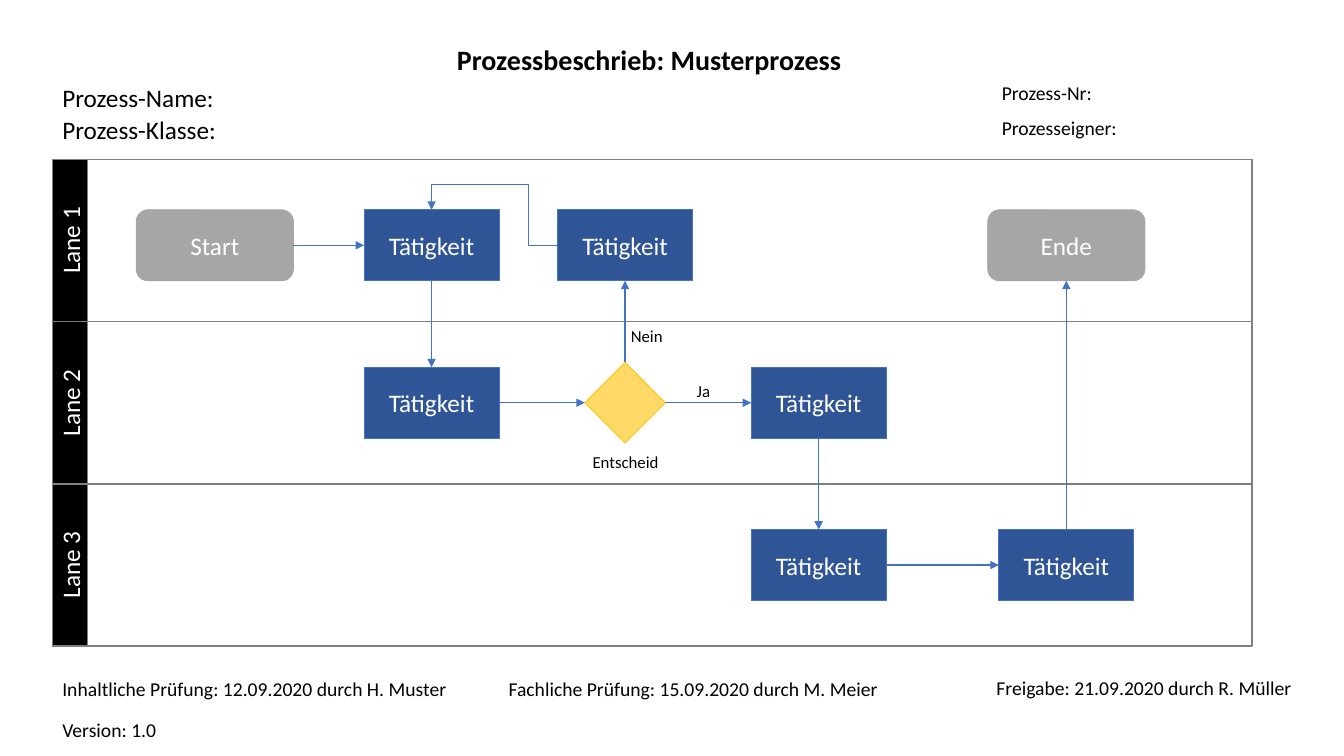
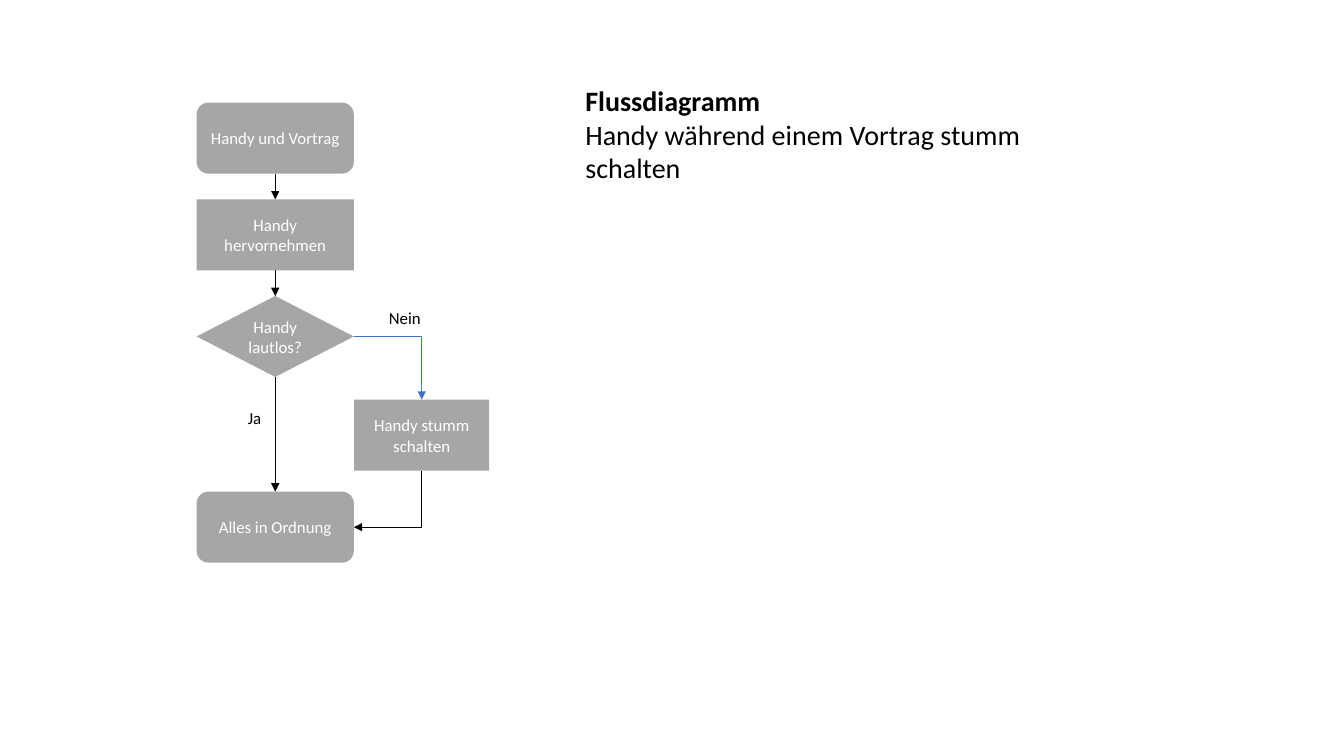
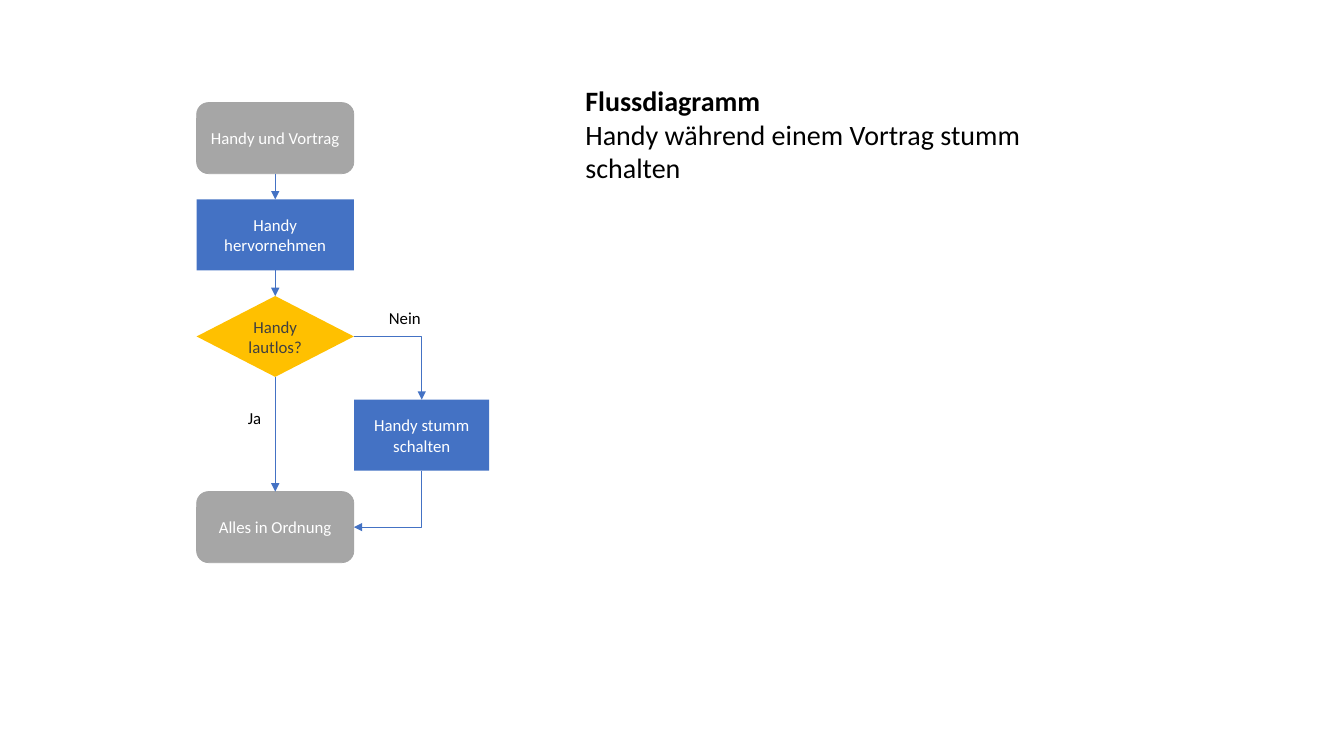
"""Builds a swimlane process slide and two flow chart slides."""
import pptx
import pptx.dml.color
import pptx.enum.shapes
import pptx.enum.text
import pptx.oxml
import pptx.oxml.ns
import pptx.util

SHAPE = pptx.enum.shapes.MSO_SHAPE
LINK = pptx.enum.shapes.MSO_CONNECTOR
ALIGN = pptx.enum.text.PP_ALIGN
ANCHOR = pptx.enum.text.MSO_ANCHOR
TOP, LEFT, BOTTOM, RIGHT = range(4)
COLORS = {
    "black": "000000", "white": "FFFFFF", "frame": "808080", "dark": "404040",
    "grey": "A6A6A6", "grey_line": "A5A5A5", "navy": "2F5597", "blue": "4472C4",
    "yellow": "FFD966", "amber": "FFC000",
}


class Deck:
    """Holds the style and the current slide; lengths are percent of the slide."""

    font = "Calibri"

    def __init__(self):
        self.prs = pptx.Presentation()
        self.prs.slide_width = pptx.util.Inches(13.33)
        self.prs.slide_height = pptx.util.Inches(7.5)

    def slide(self, origin, pitch, size, link_width):
        self.s = self.prs.slides.add_slide(self.prs.slide_layouts[5])
        self.origin, self.pitch = origin, pitch
        self.size, self.link_width = size, link_width

    def box(self, x, y, w, h):
        width, height = self.prs.slide_width, self.prs.slide_height
        return [round(v * full / 100) for v, full in zip((x, y, w, h), (width, height) * 2)]

    def color(self, name):
        return pptx.dml.color.RGBColor.from_string(COLORS[name])

    def add_lines(self, tf, lines, size, color="black", align=ALIGN.LEFT, bold_first=False):
        tf.word_wrap = True
        for i, line in enumerate(lines):
            p = tf.add_paragraph() if i else tf.paragraphs[0]
            p.alignment = align
            r = p.add_run()
            r.text = line
            r.font.name, r.font.size = self.font, pptx.util.Pt(size)
            r.font.bold = bold_first and i == 0
            r.font.color.rgb = self.color(color)

    def title(self, lines, box, align=ALIGN.LEFT):
        sp = self.s.shapes.title
        sp.left, sp.top, sp.width, sp.height = self.box(*box)
        tf = sp.text_frame
        tf.auto_size = pptx.enum.text.MSO_AUTO_SIZE.NONE
        tf.vertical_anchor = ANCHOR.TOP
        self.add_lines(tf, lines, 20, align=align, bold_first=True)

    def text(self, line, box, size=14, align=ALIGN.LEFT):
        sp = self.s.shapes.add_textbox(*self.box(*box))
        self.add_lines(sp.text_frame, [line], size, align=align)

    def shape(self, kind, box, fill=None, line=None, width=0.5, text="", color="white"):
        sp = self.s.shapes.add_shape(kind, *self.box(*box))
        sp.shadow.inherit = False
        if fill:
            sp.fill.solid()
            sp.fill.fore_color.rgb = self.color(fill)
        else:
            sp.fill.background()
        if line:
            sp.line.color.rgb = self.color(line)
            sp.line.width = pptx.util.Pt(width)
        else:
            sp.line.fill.background()
        if text:
            sp.text_frame.vertical_anchor = ANCHOR.MIDDLE
            self.add_lines(sp.text_frame, [text], self.size, color, ALIGN.CENTER)
        return sp

    def node(self, kind, col, row, w, h, *style, **more):
        x = self.origin[0] + col * self.pitch[0] - w / 2
        y = self.origin[1] + row * self.pitch[1] - h / 2
        return self.shape(kind, (x, y, w, h), *style, **more)

    def link(self, a, side_a, b, side_b, color="blue", kind=LINK.STRAIGHT):
        c = self.s.shapes.add_connector(kind, 0, 0, 0, 0)
        c.begin_connect(a, side_a)
        c.end_connect(b, side_b)
        c.line.color.rgb = self.color(color)
        c.line.width = pptx.util.Pt(self.link_width)
        ln = c.line._get_or_add_ln()
        ns = pptx.oxml.ns.nsdecls("a")
        ln.append(pptx.oxml.parse_xml(f'<a:tailEnd {ns} type="triangle"/>'))
        c._element.spPr.append(pptx.oxml.parse_xml(f"<a:effectLst {ns}/>"))
        return c

    def elbow(self, a, side_a, b, side_b, preset, turn=0, adjust=(), color="blue"):
        c = self.link(a, side_a, b, side_b, color, LINK.ELBOW)
        w, h = abs(c.end_x - c.begin_x), abs(c.end_y - c.begin_y)
        mid_x, mid_y = (c.begin_x + c.end_x) // 2, (c.begin_y + c.end_y) // 2
        if turn == 90:
            w, h = h, w
        spPr = c._element.spPr
        for flip in ("flipH", "flipV"):
            spPr.xfrm.attrib.pop(flip, None)
        spPr.xfrm.set("rot", str(turn * 60000))
        c.left, c.top, c.width, c.height = mid_x - w // 2, mid_y - h // 2, w, h
        geom = spPr.find(pptx.oxml.ns.qn("a:prstGeom"))
        geom.set("prst", preset)
        guides = "".join(f'<a:gd name="adj{i}" fmla="val {v}"/>' for i, v in enumerate(adjust, 1))
        for old in list(geom):
            geom.remove(old)
        ns = pptx.oxml.ns.nsdecls("a")
        geom.append(pptx.oxml.parse_xml(f"<a:avLst {ns}>{guides}</a:avLst>"))


def swimlanes(deck):
    """Draws the process with three lanes."""
    left, top, width, lane = 3.9, 21.07, 89.27, 21.47
    deck.slide((32.11, top + lane / 2), (14.4, lane), 18, 1)
    deck.title(["Prozessbeschrieb: Musterprozess "], (left, 4.9, width, 5.9), ALIGN.CENTER)
    for i in range(3):
        y = top + i * lane
        deck.shape(SHAPE.RECTANGLE, (left, y, width, lane), None, "frame", 1)
        sp = deck.shape(SHAPE.RECTANGLE, (left, y, 2.63, lane), "black", "frame", 1, f"Lane {i + 1}")
        sp.text_frame._txBody.bodyPr.set("vert", "vert270")

    start, end = [
        deck.node(SHAPE.ROUNDED_RECTANGLE, col, 0.03, 11.7, 9.4, "grey", "grey_line", text=text)
        for col, text in ((-1.12, "Start"), (3.28, "Ende"))]
    first, rework, check, plan, work, finish = [
        deck.node(SHAPE.RECTANGLE, col, row, 10.05, 9.4, "navy", "blue", text="Tätigkeit")
        for col, row in ((0, 0.03), (1, 0.03), (0, 1), (2, 1), (2, 2), (3.28, 2))]
    decision = deck.node(SHAPE.DIAMOND, 1, 1, 6, 10.7, "yellow", "amber")

    for ends in ((start, RIGHT, first, LEFT), (first, BOTTOM, check, TOP),
                 (check, RIGHT, decision, LEFT), (decision, TOP, rework, BOTTOM),
                 (decision, RIGHT, plan, LEFT), (plan, BOTTOM, work, TOP),
                 (work, RIGHT, finish, LEFT), (finish, TOP, end, BOTTOM)):
        deck.link(*ends)
    deck.elbow(rework, LEFT, first, TOP, "bentConnector4", 180, (23100, 171000))

    deck.text("Ja", (51.1, 49.7, 4.2, 4), 12)
    deck.text("Nein", (46.2, 42.5, 4.2, 4), 12)
    deck.text("Entscheid", (41.5, 59.1, 10.1, 4), 12, ALIGN.CENTER)
    for text, y in (("Prozess-Name:", 10.3), ("Prozess-Klasse:", 14.5)):
        deck.text(text, (left, y, 40.6, 5.3), 18)
    for text, x, y, w in (
            ("Prozess-Nr:", 73.8, 10.1, 19.3),
            ("Prozesseigner:", 73.8, 14.7, 19.3),
            ("Inhaltliche Prüfung: 12.09.2020 durch H. Muster", left, 88.9, 33.3),
            ("Fachliche Prüfung: 15.09.2020 durch M. Meier", 37.1, 88.9, 33.3),
            ("Freigabe: 21.09.2020 durch R. Müller", 73.4, 88.7, 24.8),
            ("Version: 1.0", left, 94.3, 33.3)):
        deck.text(text, (x, y, w, 4.5))


def flowchart(deck, step, choice, choice_text, border, arrow):
    """Draws the phone flow chart in the given colours."""
    deck.slide((20.48, 18.27), (10.9, 12.8), 12, 0.5)
    deck.title(["Flussdiagramm", "Handy während einem Vortrag stumm schalten"],
               (42.8, 10.4, 38.2, 14.8))
    start, done = [
        deck.node(SHAPE.ROUNDED_RECTANGLE, 0, row, 11.7, 9.4, "grey", border, text=text)
        for row, text in ((0, "Handy und Vortrag"), (4.02, "Alles in Ordnung"))]
    take = deck.node(SHAPE.RECTANGLE, 0, 1, 11.7, 9.4, step, text="Handy hervornehmen")
    mute = deck.node(SHAPE.RECTANGLE, 1, 3.07, 10.05, 9.4, step, text="Handy stumm schalten")
    silent = deck.node(SHAPE.DIAMOND, 0, 2.05, 11.7, 10.7, choice,
                       text="Handy lautlos?", color=choice_text)
    for a, b in ((start, take), (take, silent), (silent, done)):
        deck.link(a, BOTTOM, b, TOP, arrow)
    deck.elbow(silent, RIGHT, mute, TOP, "bentConnector2")
    deck.elbow(mute, BOTTOM, done, RIGHT, "bentConnector2", 90, color=arrow)
    deck.text("Ja", (17.7, 53.3, 4.2, 4), 12)
    deck.text("Nein", (28.2, 40.1, 4.2, 4), 12)


def main():
    """Builds and saves the slides."""
    deck = Deck()
    swimlanes(deck)
    flowchart(deck, "grey", "grey", "white", None, "black")
    flowchart(deck, "blue", "amber", "dark", "grey_line", "blue")
    deck.prs.save("out.pptx")


if __name__ == "__main__":
    main()
